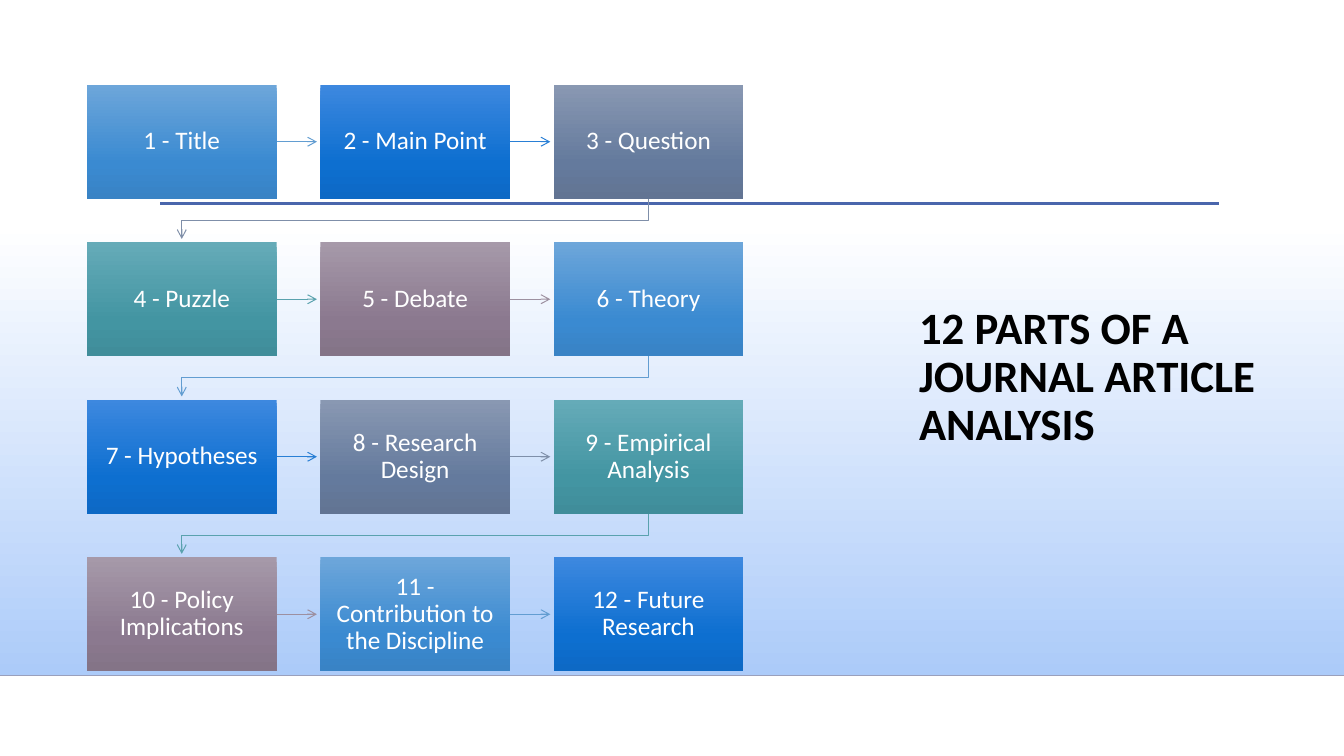
from copy import deepcopy

from lxml import etree
from pptx import Presentation
from pptx.dml.color import RGBColor
from pptx.enum.shapes import MSO_CONNECTOR, MSO_SHAPE
from pptx.enum.text import MSO_ANCHOR, PP_ALIGN
from pptx.oxml.ns import qn
from pptx.util import Pt

RECTANGLE = MSO_SHAPE.RECTANGLE
STRAIGHT = MSO_CONNECTOR.STRAIGHT
MIDDLE = MSO_ANCHOR.MIDDLE
LEFT, CENTER = PP_ALIGN.LEFT, PP_ALIGN.CENTER
RIGHT_SIDE = 3

SLIDE_WIDTH, SLIDE_HEIGHT = 960, 540
COLUMNS = 3
GRID_LEFT, GRID_TOP = 62.1, 60.6
BOX_WIDTH, BOX_HEIGHT = 135.5, 81.3
COLUMN_STEP, ROW_STEP = 166.7, 112.5
ARROW_LENGTH, ELBOW_DROP = 28.8, 15.6

PARTS = [
    "Title", "Main Point", "Question", "Puzzle", "Debate", "Theory",
    "Hypotheses", "Research Design", "Empirical Analysis",
    "Policy Implications", "Contribution to the Discipline", "Future Research",
]
# Arrow colour and box gradient, repeated through the parts
PALETTE = [
    ("629DD1", ("6DA6DA", "3A8AD1", "3983C5")),
    ("297FD5", ("3D88DF", "0D6FD0", "0D69C5")),
    ("7F8FA9", ("8998B2", "647A9D", "627493")),
    ("5AA2AE", ("65ABB8", "4395A2", "408D9A")),
    ("9D90A0", ("A699A9", "8B798F", "847487")),
]


def rgb(value):
    return RGBColor.from_string(value)


def set_all(target, values):
    for name, value in values.items():
        setattr(target, name, value)


class SlideBuilder:
    box_font = {"name": "Calibri", "size": Pt(18), "bold": False}
    title_font = {"name": "Calibri", "size": Pt(32), "bold": True}
    box_frame = {
        "word_wrap": True, "vertical_anchor": MIDDLE,
        "margin_left": Pt(6.6), "margin_right": Pt(6.6),
        "margin_top": Pt(7), "margin_bottom": Pt(7),
    }
    title_frame = {"word_wrap": True, "vertical_anchor": MIDDLE}

    def __init__(self, slide):
        self.shapes = slide.shapes

    def set_text(self, shape, text, frame, font, color, alignment):
        set_all(shape.text_frame, frame)
        paragraph = shape.text_frame.paragraphs[0]
        paragraph.text = text
        set_all(paragraph, {"alignment": alignment, "line_spacing": 0.9})
        set_all(paragraph.font, font)
        paragraph.font.color.rgb = rgb(color)

    def gradient_rectangle(self, left, top, width, height, stops):
        """Add a rectangle shaded downwards through (position, colour) stops."""
        shape = self.shapes.add_shape(
            RECTANGLE, Pt(left), Pt(top), Pt(width), Pt(height))
        shape.shadow.inherit = False
        shape.line.fill.background()
        shape.fill.gradient()
        shape.fill.gradient_angle = 270
        stop_list = shape._element.spPr.find(".//" + qn("a:gsLst"))
        for _ in stops[2:]:
            stop_list.insert(1, deepcopy(stop_list[0]))
        for stop, (position, color) in zip(shape.fill.gradient_stops, stops):
            stop.position = position
            stop.color.rgb = rgb(color)
        return shape

    def box(self, left, top, text, colors):
        shape = self.gradient_rectangle(
            left, top, BOX_WIDTH, BOX_HEIGHT, list(zip((0, 0.69, 1), colors)))
        self.set_text(shape, text, self.box_frame, self.box_font, "FFFFFF", CENTER)
        return shape

    def title(self, left, top, width, height, text):
        shape = self.shapes.add_textbox(Pt(left), Pt(top), Pt(width), Pt(height))
        self.set_text(shape, text, self.title_frame, self.title_font, "000000", LEFT)

    def style_line(self, shape, color, width, arrow):
        shape.line.color.rgb = rgb(color)
        shape.line.width = Pt(width)
        if arrow:
            line = shape._element.spPr.find(qn("a:ln"))
            etree.SubElement(line, qn("a:tailEnd"), type="arrow")

    def line(self, left, right, y, color, width, arrow=False):
        connector = self.shapes.add_connector(
            STRAIGHT, Pt(left), Pt(y), Pt(right), Pt(y))
        self.style_line(connector, color, width, arrow)
        etree.SubElement(connector._element.spPr, qn("a:effectLst"))
        return connector

    def arrow_from(self, box, left, y, color):
        arrow = self.line(left, left + ARROW_LENGTH, y, color, 0.75, arrow=True)
        arrow.begin_connect(box, RIGHT_SIDE)

    def row_return(self, start_x, end_x, top, color):
        """Add the bent arrow from the end of one row to the start of the next."""
        builder = self.shapes.build_freeform(Pt(start_x), Pt(top))
        corner_y = top + ELBOW_DROP
        points = [(start_x, corner_y), (end_x, corner_y), (end_x, top + ARROW_LENGTH)]
        builder.add_line_segments([(Pt(x), Pt(y)) for x, y in points], close=False)
        shape = builder.convert_to_shape()
        shape.shadow.inherit = False
        shape.fill.background()
        self.style_line(shape, color, 0.75, arrow=True)


def main():
    presentation = Presentation()
    set_all(presentation, {"slide_width": Pt(SLIDE_WIDTH), "slide_height": Pt(SLIDE_HEIGHT)})
    builder = SlideBuilder(presentation.slides.add_slide(presentation.slide_layouts[6]))

    builder.gradient_rectangle(
        0, 159.1, SLIDE_WIDTH, 323.3, [(0, "FFFFFF"), (1, "ACCBF9")])
    builder.line(0, SLIDE_WIDTH, 482.4, "9AA0BC", 1)
    builder.line(114.3, 871, 145.4, "4A66AC", 2.5)
    builder.title(649.4, 50.4, 260, 439.2, "12 PARTS OF A JOURNAL ARTICLE ANALYSIS")

    for index, part in enumerate(PARTS):
        row, column = divmod(index, COLUMNS)
        left = GRID_LEFT + column * COLUMN_STEP
        top = GRID_TOP + row * ROW_STEP
        arrow_color, box_colors = PALETTE[index % len(PALETTE)]
        box = builder.box(left, top, f"{index + 1} - {part}", box_colors)
        if column < COLUMNS - 1:
            builder.arrow_from(box, left + BOX_WIDTH, top + BOX_HEIGHT / 2, arrow_color)
        elif index < len(PARTS) - 1:
            builder.row_return(left + BOX_WIDTH / 2, GRID_LEFT + BOX_WIDTH / 2,
                               top + BOX_HEIGHT, arrow_color)

    presentation.save("out.pptx")


if __name__ == "__main__":
    main()
